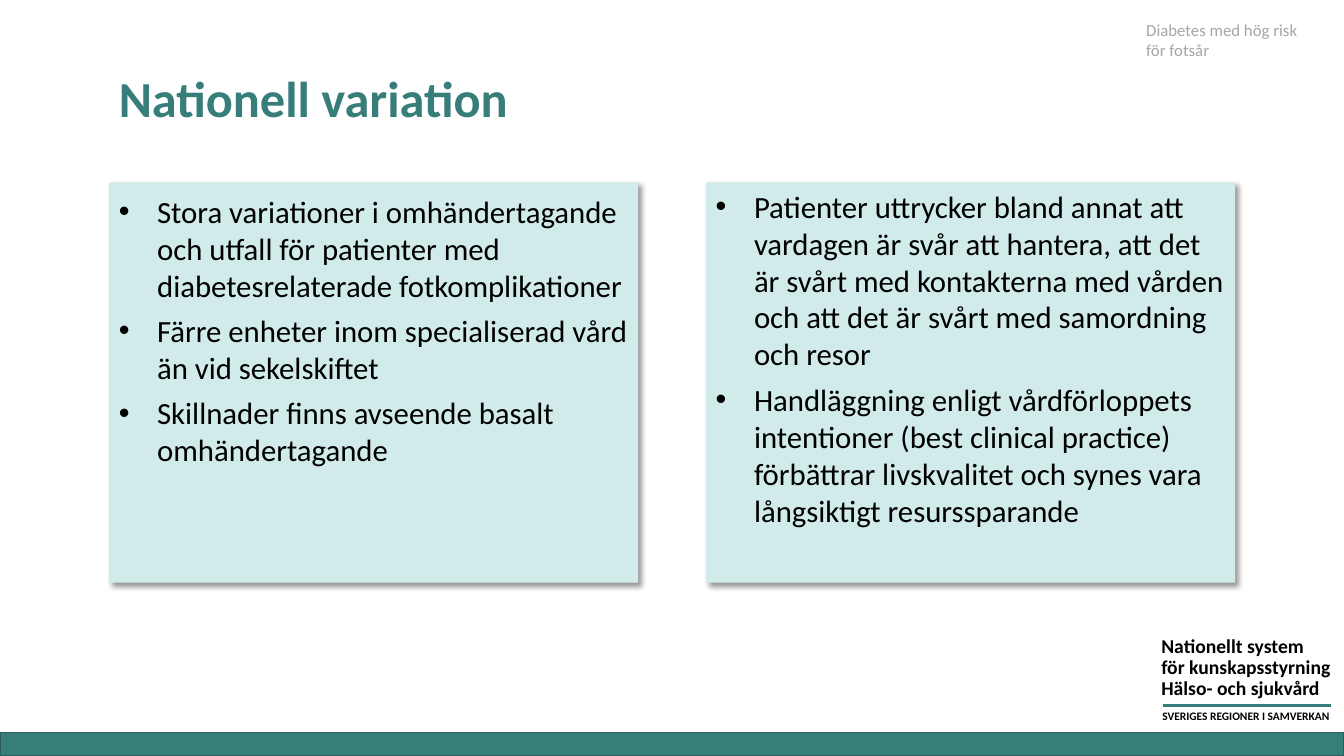
from dataclasses import dataclass
from lxml import etree
from pptx import Presentation
from pptx.dml.color import RGBColor
from pptx.enum.shapes import MSO_CONNECTOR, MSO_SHAPE
from pptx.enum.text import MSO_ANCHOR, PP_ALIGN
from pptx.oxml.ns import qn
from pptx.util import Inches, Pt

RECT = MSO_SHAPE.RECTANGLE
LINE = MSO_CONNECTOR.STRAIGHT
TOP, BOTTOM = MSO_ANCHOR.TOP, MSO_ANCHOR.BOTTOM
LEFT = PP_ALIGN.LEFT


@dataclass(frozen=True)
class Theme:
    font: str = "Calibri"
    teal: RGBColor = RGBColor(0x37, 0x7D, 0x7A)
    edge: RGBColor = RGBColor(0x29, 0x5C, 0x5A)
    mint: RGBColor = RGBColor(0xD1, 0xEB, 0xEA)
    ink: RGBColor = RGBColor(0, 0, 0)
    gray: RGBColor = RGBColor(0xA6, 0xA6, 0xA6)
    title: float = 36
    body: float = 22
    sender: float = 14
    note: float = 12
    small: float = 8.2


theme = Theme()


def write(shape, rows, size, color, bold=False, anchor=TOP, bullet=False, **form):
    """Fill a shape with one paragraph per row."""
    frame = shape.text_frame
    frame.word_wrap = True
    frame.vertical_anchor = anchor
    for i, row in enumerate(rows):
        para = frame.paragraphs[0] if i == 0 else frame.add_paragraph()
        para.text = row
        para.alignment = LEFT
        for key, value in form.items():
            setattr(para, key, value)
        if bullet:
            para.space_before = Pt(6 if i else 0)
            props = para._p.get_or_add_pPr()
            props.set("marL", str(Inches(0.38)))
            props.set("indent", str(Inches(-0.38)))
            etree.SubElement(props, qn("a:buFont"), typeface="Arial")
            etree.SubElement(props, qn("a:buChar"), char="•")
        font = para.runs[0].font
        for key, value in {"name": theme.font, "size": Pt(size), "bold": bold}.items():
            setattr(font, key, value)
        font.color.rgb = color


def label(left, top, width, height, rows, size, color, **form):
    """Add a text box and fill it."""
    box = slide.shapes.add_textbox(Inches(left), Inches(top), Inches(width), Inches(height))
    write(box, rows, size, color, **form)


deck = Presentation()
deck.slide_width, deck.slide_height = Inches(13.33), Inches(7.5)
slide = deck.slides.add_slide(deck.slide_layouts[6])

# Footer band
band = slide.shapes.add_shape(RECT, Inches(0), Inches(7.27), Inches(13.33), Inches(0.23))
band.shadow.inherit = False
band.fill.solid()
band.fill.fore_color.rgb = theme.teal
band.line.color.rgb = theme.edge
band.line.width = Pt(1)

# Sender block with rule
sender = ["Nationellt system", "för kunskapsstyrning", "Hälso- och sjukvård"]
label(11.42, 6.27, 2.43, 0.73, sender, theme.sender, theme.ink,
      bold=True, line_spacing=Pt(14.8))
rule = slide.shapes.add_connector(LINE, Inches(11.53), Inches(7), Inches(13.2), Inches(7))
rule.line.color.rgb = theme.teal
rule.line.width = Pt(2.5)
etree.SubElement(rule._element.spPr, qn("a:effectLst"))
label(11.43, 6.99, 2.19, 0.24, ["SVERIGES REGIONER I SAMVERKAN"],
      theme.small, theme.ink, bold=True)

# Title and topic
label(1.08, 0.65, 10, 0.67, ["Nationell variation"], theme.title, theme.teal,
      bold=True, anchor=BOTTOM, line_spacing=0.9)
label(11.27, 0.15, 1.7, 0.5, ["Diabetes med hög risk för fotsår"], theme.note, theme.gray)

# Two bullet panels: left edge, top inset, points
panels = [
    (1.08, 0.1, [
        "Stora variationer i omhändertagande och utfall för patienter med "
        "diabetesrelaterade fotkomplikationer",
        "Färre enheter inom specialiserad vård än vid sekelskiftet",
        "Skillnader finns avseende basalt omhändertagande",
    ]),
    (7, 0.05, [
        "Patienter uttrycker bland annat att vardagen är svår att hantera, att det är "
        "svårt med kontakterna med vården och att det är svårt med samordning och resor",
        "Handläggning enligt vårdförloppets intentioner (best clinical practice) "
        "förbättrar livskvalitet och synes vara långsiktigt resurssparande",
    ]),
]
for left, inset, points in panels:
    panel = slide.shapes.add_shape(RECT, Inches(left), Inches(1.81), Inches(5.25), Inches(3.97))
    panel.fill.solid()
    panel.fill.fore_color.rgb = theme.mint
    panel.line.fill.background()
    panel.text_frame.margin_top = Inches(inset)
    write(panel, points, theme.body, theme.ink, bullet=True)

    # Soft shadow down to the right
    panel.shadow.inherit = False
    effects = panel._element.spPr.find(qn("a:effectLst"))
    shade = etree.SubElement(effects, qn("a:outerShdw"), blurRad=str(Pt(4)),
                             dist=str(Pt(3)), dir="2700000", algn="tl", rotWithShape="0")
    tint = etree.SubElement(shade, qn("a:srgbClr"), val=str(theme.ink))
    etree.SubElement(tint, qn("a:alpha"), val="40000")

deck.save("out.pptx")
